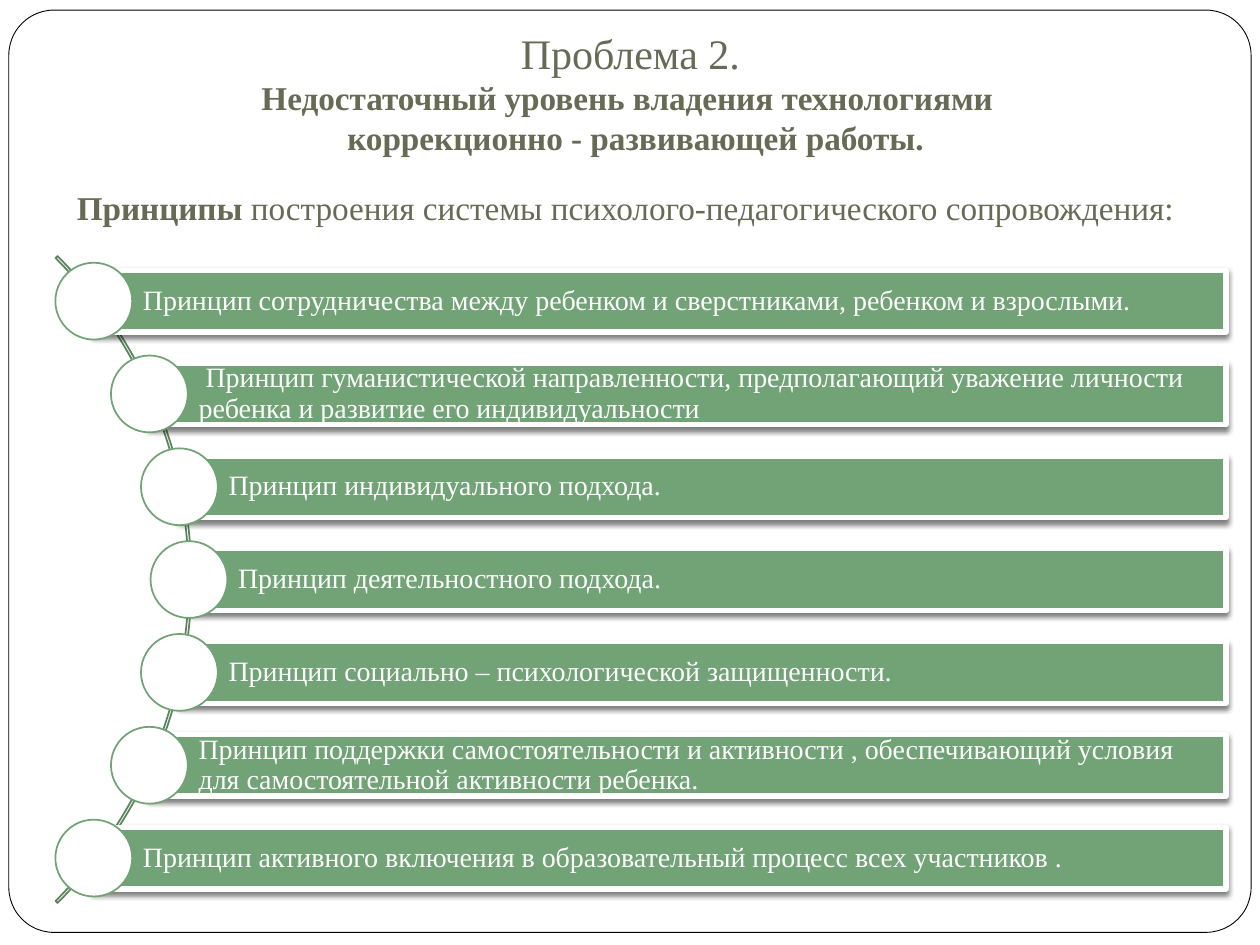
import math

import lxml.etree
import pptx
import pptx.dml.color
import pptx.enum.shapes
import pptx.enum.text
import pptx.oxml
import pptx.oxml.ns
import pptx.util

Inches = pptx.util.Inches
Pt = pptx.util.Pt
RGBColor = pptx.dml.color.RGBColor
MSO_SHAPE = pptx.enum.shapes.MSO_SHAPE
PP_ALIGN = pptx.enum.text.PP_ALIGN
MSO_ANCHOR = pptx.enum.text.MSO_ANCHOR

WHITE = RGBColor(0xFF, 0xFF, 0xFF)
BLACK = RGBColor(0x00, 0x00, 0x00)
OLIVE = RGBColor(0x67, 0x6A, 0x55)
GREEN = RGBColor(0x72, 0xA3, 0x76)
DARK_GREEN = RGBColor(0x5B, 0x83, 0x5E)
FONT = "Times New Roman"

SHADOW = (
    '<a:effectLst xmlns:a="http://schemas.openxmlformats.org/drawingml/2006/main">'
    '<a:outerShdw blurRad="38100" dist="25400" dir="5400000" rotWithShape="0">'
    '<a:srgbClr val="000000"><a:alpha val="50000"/></a:srgbClr>'
    "</a:outerShdw></a:effectLst>"
)

PRINCIPLES = [
    "Принцип сотрудничества между ребенком и сверстниками, ребенком и взрослыми.",
    " Принцип гуманистической направленности, предполагающий уважение личности "
    "ребенка и развитие его индивидуальности",
    "Принцип индивидуального подхода.",
    "Принцип деятельностного подхода.",
    "Принцип социально – психологической защищенности.",
    "Принцип поддержки самостоятельности и активности , обеспечивающий условия "
    "для самостоятельной активности ребенка.",
    "Принцип активного включения в образовательный процесс всех участников .",
]

presentation = pptx.Presentation()
presentation.slide_width = Inches(10)
presentation.slide_height = Inches(7.5)
slide = presentation.slides.add_slide(presentation.slide_layouts[6])


def add_outlined(kind, left, top, width, height, fill, line, line_width):
    shape = slide.shapes.add_shape(
        kind, Inches(left), Inches(top), Inches(width), Inches(height))
    shape.shadow.inherit = False
    if fill is None:
        shape.fill.background()
    else:
        shape.fill.solid()
        shape.fill.fore_color.rgb = fill
    shape.line.color.rgb = line
    shape.line.width = Pt(line_width)
    return shape


def add_run(paragraph, text, size, color, bold=False):
    run = paragraph.add_run()
    run.text = text
    run.font.name = FONT
    run.font.size = Pt(size)
    run.font.bold = bold
    run.font.color.rgb = color


# Rounded frame around the slide
frame = add_outlined(MSO_SHAPE.ROUNDED_RECTANGLE, 0.07, 0.08, 9.86, 7.32, WHITE, BLACK, 0.5)
frame.adjustments[0] = 0.049

# Problem title and principles heading
headings = []
for left, top, width, height in [(0.28, 0.1, 9.53, 1.25), (0.12, 1.35, 9.69, 0.55)]:
    box = slide.shapes.add_textbox(Inches(left), Inches(top), Inches(width), Inches(height))
    box.text_frame.word_wrap = True
    box.text_frame.vertical_anchor = MSO_ANCHOR.BOTTOM
    box.text_frame.margin_bottom = Inches(0.1)
    heading = box.text_frame.paragraphs[0]
    heading.alignment = PP_ALIGN.CENTER
    headings.append(heading)

problem, principles_heading = headings
add_run(problem, "Проблема 2. ", 24, OLIVE)
problem.add_line_break()
add_run(problem, "Недостаточный уровень владения технологиями  ", 19, OLIVE, bold=True)
problem.add_line_break()
add_run(problem, "коррекционно - развивающей работы.", 19, OLIVE, bold=True)
add_run(principles_heading, "Принципы", 19, OLIVE, bold=True)
add_run(principles_heading, " построения системы психолого-педагогического сопровождения:", 19, OLIVE)

# Thin arc that carries the circles
ARC_X, ARC_Y, ARC_SIZE = -2.11, 4.6, 7.26
arc = add_outlined(MSO_SHAPE.BLOCK_ARC, ARC_X - ARC_SIZE / 2, ARC_Y - ARC_SIZE / 2,
                   ARC_SIZE, ARC_SIZE, None, DARK_GREEN, 1)
for index, value in enumerate((189, 27, 0.003)):
    arc.adjustments[index] = value

# Bars start at the centre of their circle and end on one right edge
CIRCLE_RADIUS_ON_ARC = 3.61
PITCH = 4.42 / 6
BAR_RIGHT, BAR_HEIGHT, CIRCLE = 9.73, 0.49, 0.61
for index, principle in enumerate(PRINCIPLES):
    offset = (index - 3) * PITCH
    x = ARC_X + math.sqrt(CIRCLE_RADIUS_ON_ARC ** 2 - offset ** 2)
    y = ARC_Y + offset

    bar = add_outlined(MSO_SHAPE.RECTANGLE, x, y - BAR_HEIGHT / 2,
                       BAR_RIGHT - x, BAR_HEIGHT, GREEN, WHITE, 3)
    properties = bar.element.spPr
    properties.remove(properties.find(pptx.oxml.ns.qn("a:effectLst")))
    properties.append(pptx.oxml.parse_xml(SHADOW))

    text = bar.text_frame
    text.word_wrap = True
    text.vertical_anchor = MSO_ANCHOR.MIDDLE
    text.margin_left = Inches(0.39)
    text.margin_top = text.margin_right = text.margin_bottom = Inches(0.04)
    text.paragraphs[0].alignment = PP_ALIGN.LEFT
    text.paragraphs[0].line_spacing = 0.9
    add_run(text.paragraphs[0], principle, 16, WHITE)

    add_outlined(MSO_SHAPE.OVAL, x - CIRCLE / 2, y - CIRCLE / 2, CIRCLE, CIRCLE, WHITE, GREEN, 1)

presentation.save("out.pptx")
